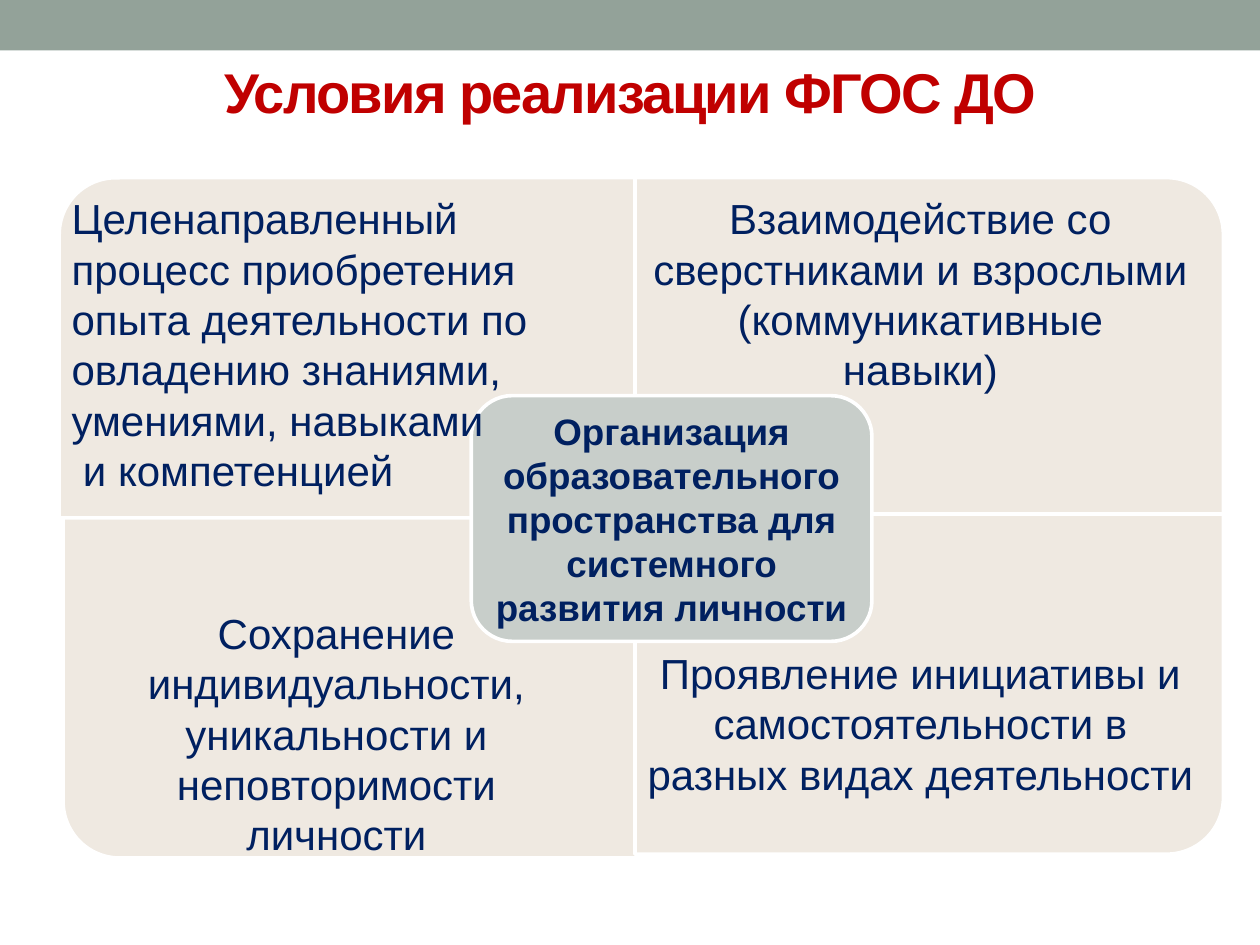
from pptx import Presentation
from pptx.dml.color import RGBColor
from pptx.enum.shapes import MSO_SHAPE as Preset
from pptx.enum.text import MSO_ANCHOR as Anchor, PP_ALIGN as Align
from pptx.util import Inches, Pt

BAND = RGBColor(0x93, 0xA2, 0x99)
PANEL = RGBColor(0xEF, 0xE9, 0xE1)
CENTRE = RGBColor(0xC8, 0xCE, 0xCA)
WHITE = RGBColor(0xFF, 0xFF, 0xFF)
RED = RGBColor(0xC0, 0x00, 0x00)
NAVY = RGBColor(0x00, 0x20, 0x60)
FONT = "Arial"

QUADRANTS = [
    ((0.47, 1.41, 4.67, 2.7), 270, (0.47, 1.48, 4.45, 2.52), Align.LEFT,
     ["Целенаправленный процесс приобретения опыта деятельности по "
      "овладению знаниями, умениями, навыками", "и компетенцией"]),
    ((5.04, 1.41, 4.67, 2.7), 0, (5.04, 1.48, 4.53, 1.72), Align.CENTER,
     ["Взаимодействие со сверстниками и взрослыми",
      "(коммуникативные", "навыки)"]),
    ((0.5, 4.11, 4.67, 2.7), 180, (0.59, 4.77, 4.16, 2.12), Align.CENTER,
     ["Сохранение индивидуальности, уникальности и неповторимости личности"]),
    ((5.04, 4.08, 4.67, 2.7), 90, (5.04, 5.09, 4.53, 1.72), Align.CENTER,
     ["Проявление инициативы и самостоятельности в разных видах деятельности"]),
]


def inches(box):
    return [Inches(value) for value in box]


def add_panel(slide, preset, box, fill, line=None):
    shape = slide.shapes.add_shape(preset, *inches(box))
    shape.shadow.inherit = False
    shape.fill.solid()
    shape.fill.fore_color.rgb = fill
    if line is None:
        shape.line.fill.background()
    else:
        shape.line.color.rgb = line
        shape.line.width = Pt(2.08)
    return shape


def write(frame, lines, size, color, align=Align.CENTER, bold=False):
    frame.word_wrap = True
    for index, line in enumerate(lines):
        paragraph = frame.paragraphs[0] if index == 0 else frame.add_paragraph()
        paragraph.alignment = align
        run = paragraph.add_run()
        run.text = line
        font = run.font
        font.name, font.size, font.bold = FONT, Pt(size), bold
        font.color.rgb = color


def add_title(slide, box, text):
    title = slide.shapes.title
    title.left, title.top, title.width, title.height = inches(box)
    frame = title.text_frame
    frame.vertical_anchor = Anchor.MIDDLE
    write(frame, [text], 32, RED, bold=True)
    frame.paragraphs[0].runs[0].font._element.set("spc", "-100")


def add_quadrant(slide, box, rotation):
    left, top, width, height = box
    if rotation in (90, 270):
        shift = (width - height) / 2
        box = (left + shift, top - shift, height, width)
    shape = add_panel(slide, Preset.ROUND_1_RECTANGLE, box, PANEL, WHITE)
    shape.rotation = rotation


def add_centre(slide, box, lines):
    shape = add_panel(slide, Preset.ROUNDED_RECTANGLE, box, CENTRE, WHITE)
    frame = shape.text_frame
    frame.vertical_anchor = Anchor.MIDDLE
    frame.margin_left = frame.margin_right = Inches(0.09)
    frame.margin_top = frame.margin_bottom = Inches(0.09)
    write(frame, lines, 21, NAVY, bold=True)


def add_caption(slide, box, lines, align):
    frame = slide.shapes.add_textbox(*inches(box)).text_frame
    write(frame, lines, 24, NAVY, align)
    if align == Align.LEFT:
        last = frame.paragraphs[-1]._p.get_or_add_pPr()
        last.set("marL", str(Inches(0.09)))


def main():
    presentation = Presentation()
    presentation.slide_width = Inches(10)
    presentation.slide_height = Inches(7.5)
    slide = presentation.slides.add_slide(presentation.slide_layouts[5])

    add_panel(slide, Preset.RECTANGLE, (0, 0, 10, 0.4), BAND)
    add_title(slide, (0.5, 0.3, 9, 0.85), "Условия реализации ФГОС ДО")
    for box, rotation, *_ in QUADRANTS:
        add_quadrant(slide, box, rotation)
    add_centre(slide, (3.74, 3.14, 3.18, 1.95),
               ["Организация", "образовательного",
                "пространства для системного развития личности"])
    for _, _, box, align, lines in QUADRANTS:
        add_caption(slide, box, lines, align)
    presentation.save("out.pptx")


if __name__ == "__main__":
    main()
